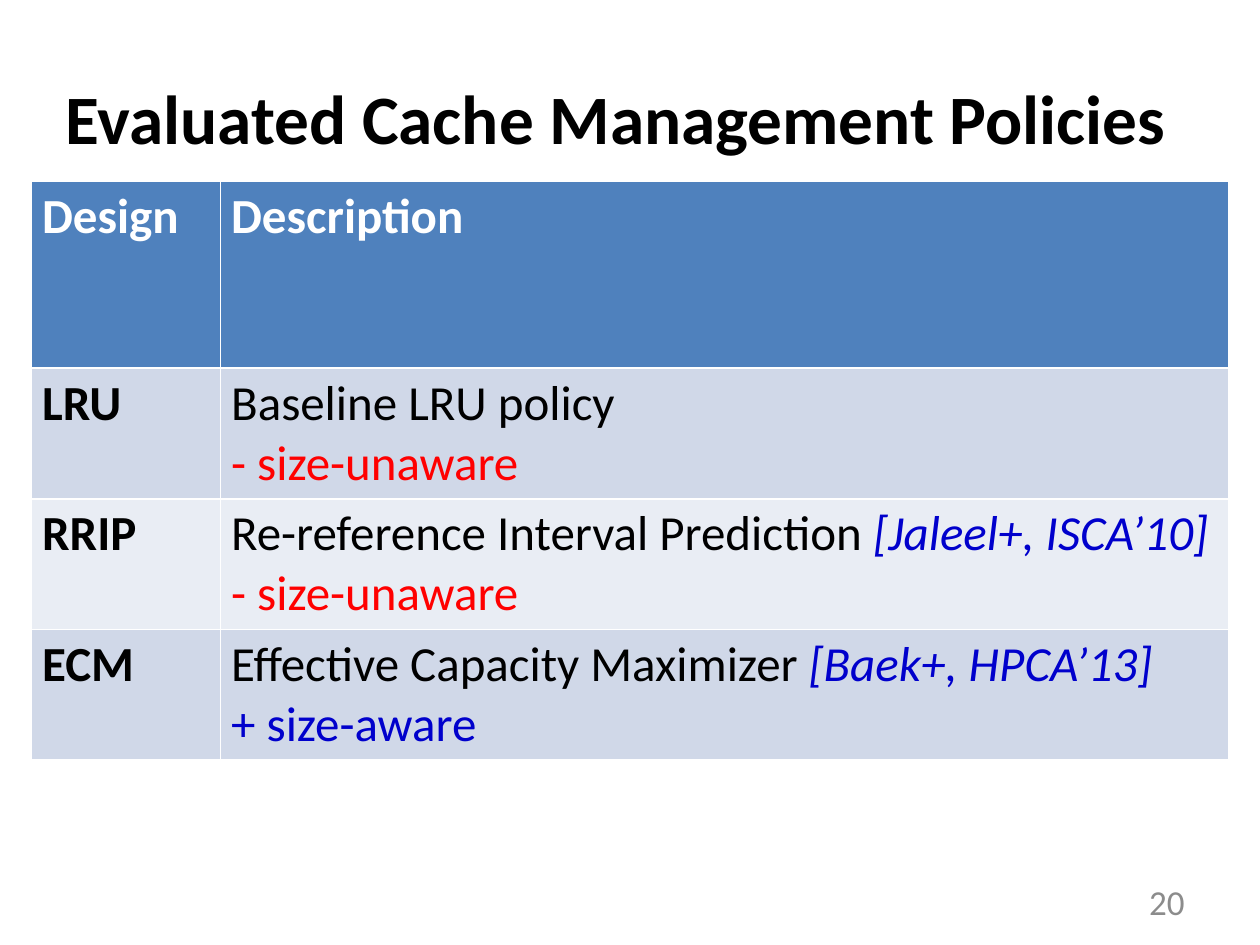
from pptx import Presentation
from pptx.dml.color import RGBColor
from pptx.enum.text import MSO_ANCHOR, PP_ALIGN
from pptx.util import Cm, Pt

COLORS = {
    "black": "000000",
    "white": "FFFFFF",
    "gray": "8C8C8C",
    "red": "FF0000",
    "blue": "0000CC",
    "header": "4F81BD",
    "dark band": "D0D8E8",
    "light band": "E9EDF4",
}


def add_text(paragraph, text, size=28, color="black", bold=False, italic=False, font="Calibri"):
    run = paragraph.add_run()
    run.text = text
    run.font.name = font
    run.font.size = Pt(size)
    run.font.bold = bold
    run.font.italic = italic
    run.font.color.rgb = RGBColor.from_string(COLORS[color])


class SlideBuilder:
    def __init__(self, slide):
        self.slide = slide

    def title(self, text, left, top, width, height):
        shape = self.slide.shapes.title
        shape.left, shape.top, shape.width, shape.height = map(Cm, (left, top, width, height))
        self.format_frame(shape.text_frame, PP_ALIGN.LEFT)
        add_text(shape.text_frame.paragraphs[0], text, size=39.6, bold=True)

    def page_number(self, number, left, top, width, height):
        shape = self.slide.shapes.add_textbox(*map(Cm, (left, top, width, height)))
        self.format_frame(shape.text_frame, PP_ALIGN.RIGHT)
        add_text(shape.text_frame.paragraphs[0], str(number), size=20, color="gray")

    def format_frame(self, frame, alignment):
        frame.word_wrap = True
        frame.vertical_anchor = MSO_ANCHOR.MIDDLE
        frame.paragraphs[0].alignment = alignment

    def table(self, rows, left, top, widths, heights):
        """Each cell is a list of paragraphs, each a list of (text, format) runs."""
        shape = self.slide.shapes.add_table(
            len(rows), len(widths), Cm(left), Cm(top), Cm(sum(widths)), Cm(sum(heights)))
        table = shape.table
        for column, width in zip(table.columns, widths):
            column.width = Cm(width)
        for index, (row, height, contents) in enumerate(zip(table.rows, heights, rows)):
            row.height = Cm(height)
            band = "dark band" if index % 2 else "light band"
            for cell, paragraphs in zip(row.cells, contents):
                self.fill_cell(cell, paragraphs, band if index else "header")

    def fill_cell(self, cell, paragraphs, fill):
        cell.fill.solid()
        cell.fill.fore_color.rgb = RGBColor.from_string(COLORS[fill])
        cell.margin_left = cell.margin_right = Cm(0.21)
        cell.margin_top = cell.margin_bottom = Cm(0.11)
        frame = cell.text_frame
        for index, runs in enumerate(paragraphs):
            paragraph = frame.add_paragraph() if index else frame.paragraphs[0]
            for text, style in runs:
                add_text(paragraph, text, **style)


def main():
    presentation = Presentation()
    presentation.slide_width, presentation.slide_height = Cm(25.4), Cm(19.05)
    builder = SlideBuilder(presentation.slides.add_slide(presentation.slide_layouts[5]))

    # Title
    builder.title("Evaluated Cache Management Policies", 1.07, 0.76, 23.06, 3.18)

    # Policy table
    heading = {"bold": True, "color": "white"}
    name = {"bold": True}
    plain = {}
    citation = {"color": "blue", "italic": True}
    drawback = {"color": "red"}
    benefit = {"color": "blue"}
    rows = [
        [[[("Design", heading)]], [[("Description", heading)]]],
        [[[("LRU", name)]],
         [[("Baseline LRU policy", plain)], [("- size-unaware", drawback)]]],
        [[[("RRIP", name)]],
         [[("Re-reference Interval Prediction ", plain),
           ("[Jaleel+, ISCA’10] ", citation),
           ("- size-unaware", drawback)]]],
        [[[("ECM", name)]],
         [[("Effective Capacity Maximizer ", plain), ("[Baek+, HPCA’13]", citation)],
          [("+ size-aware", benefit)]]],
    ]
    builder.table(rows, 0.64, 3.66, widths=[3.81, 20.32], heights=[3.76, 2.54, 2.29, 2.54])

    # Page number
    builder.page_number(20, 18.2, 17.66, 5.93, 1.01)

    presentation.save("out.pptx")


if __name__ == "__main__":
    main()
